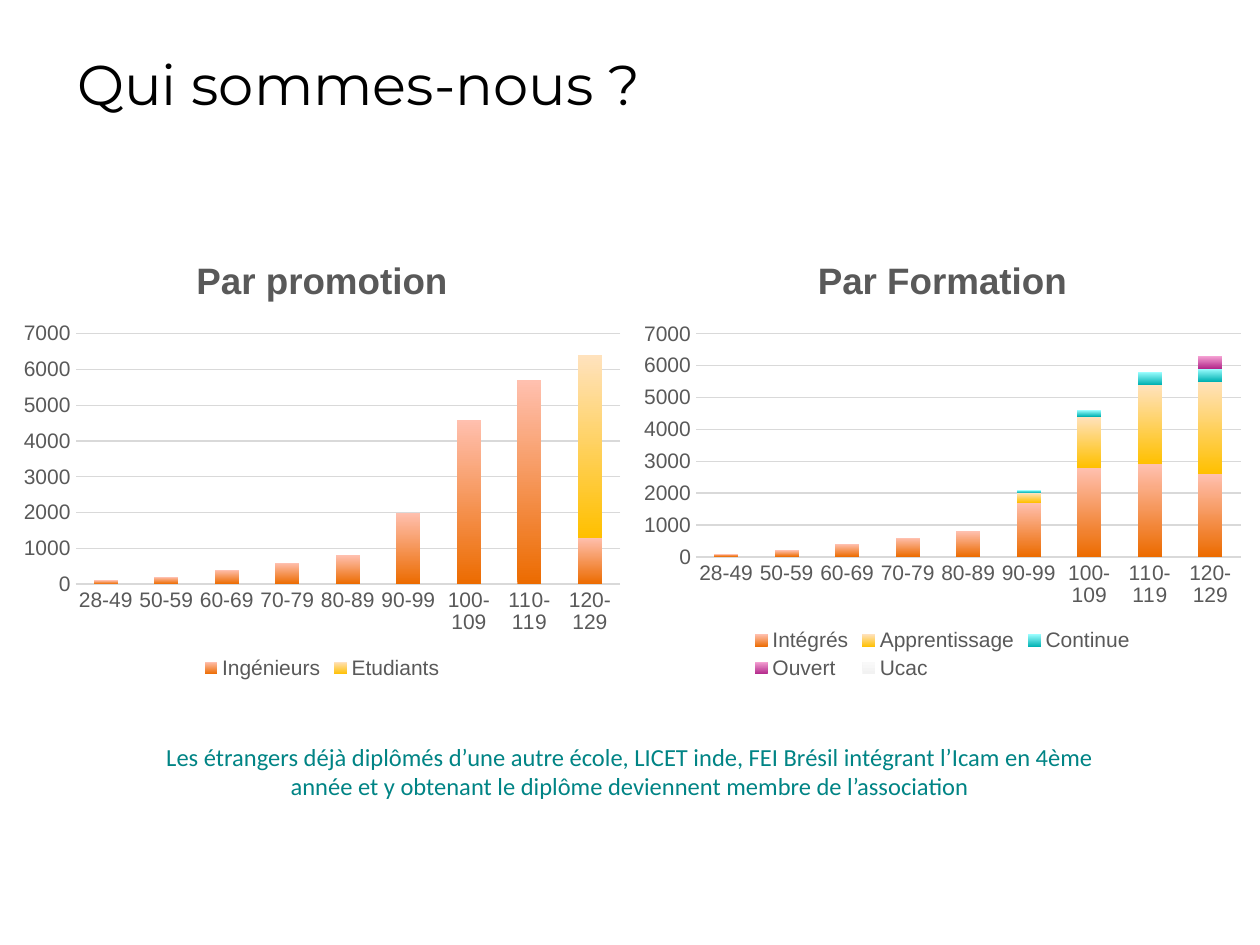
import pptx
import pptx.chart.data
import pptx.dml.color
import pptx.enum.chart
import pptx.enum.text
import pptx.util

Pt = pptx.util.Pt
GREY = "595959"
RULE = "D9D9D9"
GRADIENTS = [
    ("EC6B00", "FFC0AF"),
    ("FFC000", "FFE2BD"),
    ("00B1B2", "9BFEFF"),
    ("B2288A", "F5A1D3"),
    ("F2F2F2", "F9F9F9"),
]
PROMOTIONS = ["28-49", "50-59", "60-69", "70-79", "80-89", "90-99",
              "100-109", "110-119", "120-129"]
BY_FORMATION = {
    "Intégrés": [100, 200, 400, 600, 800, 1700, 2800, 2900, 2600],
    "Apprentissage": [0, 0, 0, 0, 0, 300, 1600, 2500, 2900],
    "Continue": [0, 0, 0, 0, 0, 100, 200, 400, 400],
    "Ouvert": [0, 0, 0, 0, 0, 0, 0, 0, 400],
    "Ucac": [0, 0, 0, 0, 0, 0, 0, 0, None],
}
BY_PROMOTION = {
    "Ingénieurs": [100, 200, 400, 600, 800, 2000, 4600, 5700, 1300],
    "Etudiants": [0, 0, 0, 0, 0, 0, 0, 0, 5100],
}


def color(value):
    return pptx.dml.color.RGBColor.from_string(value)


class SlideBuilder:
    def __init__(self, page):
        self.page = page

    def style(self, font, name, size, value, bold=False):
        font.name = name
        font.size = Pt(size)
        font.bold = bold
        font.color.rgb = color(value)

    def text(self, words, left, top, width, height, name, size, value,
             align=pptx.enum.text.PP_ALIGN.LEFT,
             anchor=pptx.enum.text.MSO_ANCHOR.TOP):
        box = self.page.shapes.add_textbox(Pt(left), Pt(top), Pt(width), Pt(height))
        frame = box.text_frame
        frame.word_wrap = True
        frame.vertical_anchor = anchor
        frame.text = words
        para = frame.paragraphs[0]
        para.alignment = align
        self.style(para.runs[0].font, name, size, value)

    def stacked_columns(self, title, series_values, left, top, width, height):
        data = pptx.chart.data.CategoryChartData()
        data.categories = PROMOTIONS
        for name, values in series_values.items():
            data.add_series(name, values)
        chart = self.page.shapes.add_chart(
            pptx.enum.chart.XL_CHART_TYPE.COLUMN_STACKED,
            Pt(left), Pt(top), Pt(width), Pt(height), data).chart
        self.style(chart.font, "Arial", 10, "000000")

        chart.has_title = True
        frame = chart.chart_title.text_frame
        frame.text = title
        self.style(frame.paragraphs[0].runs[0].font, "Arial", 21, GREY, bold=True)
        chart.chart_title.include_in_layout = False

        chart.has_legend = True
        chart.legend.position = pptx.enum.chart.XL_LEGEND_POSITION.BOTTOM
        chart.legend.include_in_layout = False
        self.style(chart.legend.font, "Arial", 12, GREY)

        plot = chart.plots[0]
        plot.gap_width = 150
        plot.overlap = 100
        plot.vary_by_categories = False
        for series, stops in zip(plot.series, GRADIENTS):
            self.gradient(series.format.fill, stops)
        self.axes(chart)

    def gradient(self, fill, stops):
        """Run the first colour at the bottom into the second at the top."""
        fill.gradient()
        fill.gradient_angle = 90
        for stop, position, value in zip(fill.gradient_stops, (0, 1), stops):
            stop.position = position
            stop.color.rgb = color(value)

    def axes(self, chart):
        for axis in (chart.category_axis, chart.value_axis):
            axis.major_tick_mark = pptx.enum.chart.XL_TICK_MARK.NONE
            axis.minor_tick_mark = pptx.enum.chart.XL_TICK_MARK.NONE
            self.style(axis.tick_labels.font, "Arial", 12, GREY)
            # Automatic rotation lets long category labels wrap.
            for body in axis._element.xpath("c:txPr/a:bodyPr"):
                body.set("rot", "-60000000")
                body.set("vert", "horz")
        self.line(chart.category_axis.format.line, 1)
        values = chart.value_axis
        values.minimum_scale = 0
        values.maximum_scale = 7000
        values.major_unit = 1000
        values.format.line.fill.background()
        self.line(values.major_gridlines.format.line, 0.75)

    def line(self, line, width):
        line.width = Pt(width)
        line.color.rgb = color(RULE)


def main():
    deck = pptx.Presentation()
    deck.slide_width = Pt(720)
    deck.slide_height = Pt(540)
    builder = SlideBuilder(deck.slides.add_slide(deck.slide_layouts[6]))

    builder.text("Qui sommes-nous ?", 37, 19, 648, 57, "Montserrat", 32, "000000",
                 anchor=pptx.enum.text.MSO_ANCHOR.MIDDLE)
    builder.text(
        "Les étrangers déjà diplômés d’une autre école, LICET inde, FEI Brésil "
        "intégrant l’Icam en 4ème année et y obtenant le diplôme deviennent "
        "membre de l’association",
        73, 420.5, 574, 41, "Calibri", 14, "008485",
        align=pptx.enum.text.PP_ALIGN.CENTER)

    chart_width = 355
    for title, values, left in (("Par Formation", BY_FORMATION, 361),
                                ("Par promotion", BY_PROMOTION, 6.5)):
        builder.stacked_columns(title, values, left, 134.5, chart_width, 256.5)
    deck.save("out.pptx")


if __name__ == "__main__":
    main()
